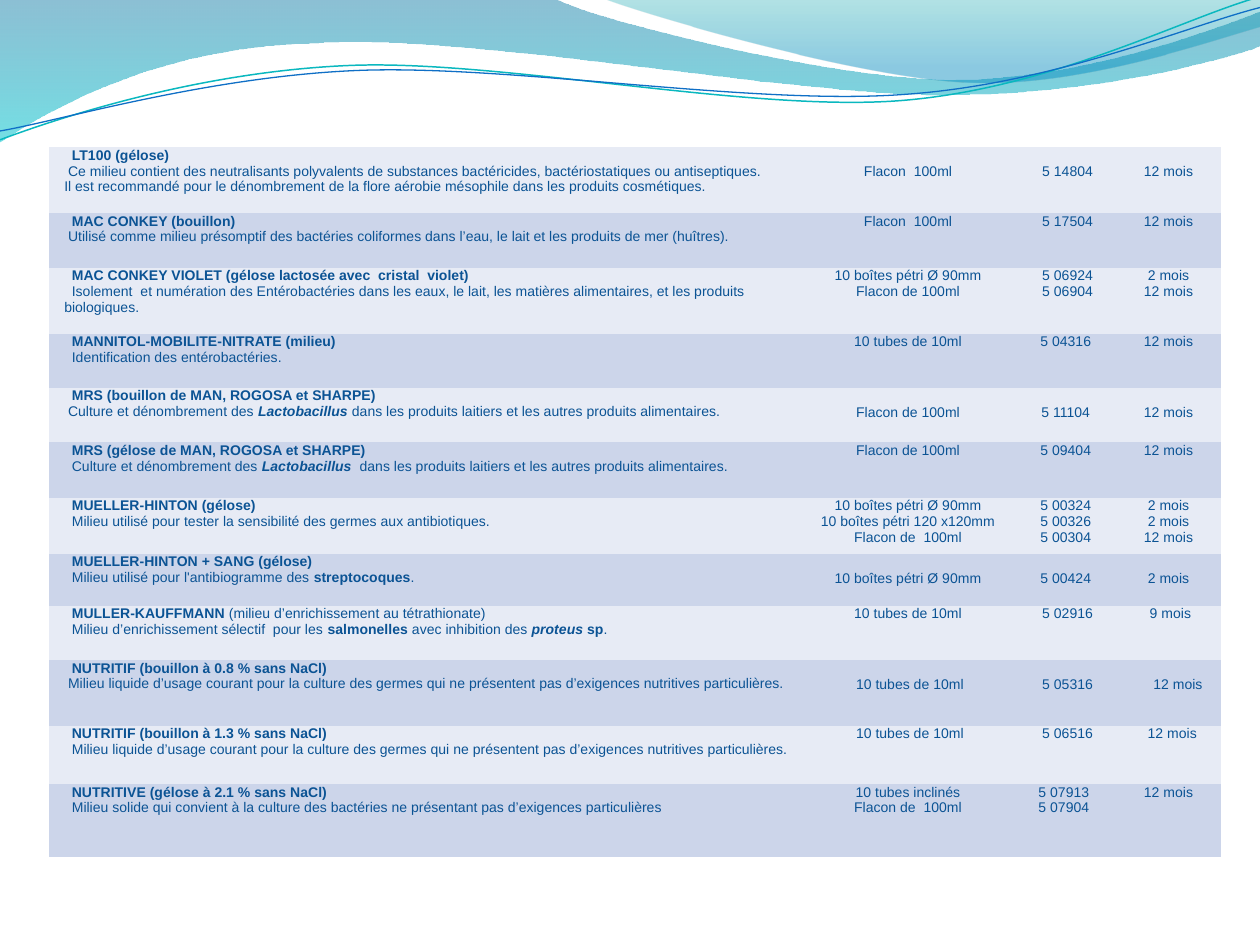
import math
from dataclasses import dataclass

import pptx
import pptx.dml.color
import pptx.enum.text
import pptx.oxml
import pptx.oxml.ns
import pptx.util

Inches, Pt = pptx.util.Inches, pptx.util.Pt
RGB = pptx.dml.color.RGBColor
qn = pptx.oxml.ns.qn

INK = RGB(0x0B, 0x53, 0x94)
BANDS = RGB(0xE7, 0xEB, 0xF5), RGB(0xCC, 0xD5, 0xEA)
SEA, AQUA = RGB(0x00, 0x74, 0xA1), RGB(0x00, 0xC6, 0xCF)
TEAL, SKY = RGB(0x00, 0xA1, 0xA9), RGB(0x00, 0x8B, 0xBF)
CYAN, BLUE = RGB(0x0A, 0xB8, 0xBF), RGB(0x0F, 0x6F, 0xC6)

NO_GRID = "{2D5ABB26-0587-4C30-8999-92F81FD0307C}"
WIDE, HIGH = 9.3, 5.63  # table size
WIDTHS = 5.99, 1.64, 0.83, 0.83
STEP = 0.03  # one step of indent
LINE = 0.13  # height of one text line


@dataclass
class Stop:
    color: RGB
    alpha: int
    place: float


@dataclass
class Wave:
    """Outline: one point makes a straight leg, three make a Bezier curve."""
    start: tuple
    legs: list
    stops: tuple = ()
    line: RGB = None
    width: float = 0
    mid: tuple = (0, 0)
    turn: float = 0  # degrees about mid


@dataclass
class Medium:
    """Name and notes use *bold* and *_bold italic* marks."""
    height: float
    name: str
    notes: list
    packs: list
    codes: list
    lives: list
    dent: int = 2
    shifts: tuple = (0, 2, 0)
    drop: bool = False  # details start on the second line


WAVES = [
    Wave((0, 0), [
        [(4.4, -0.01)],
        [(4.76, 0.17), (6.64, 0.63), (7.58, 0.63)],
        [(8.53, 0.63), (9.58, 0.26), (10, 0.09)],
        [(10.01, 0.36)],
        [(9.83, 0.44), (8.7, 0.76), (7.46, 0.75)],
        [(6.22, 0.75), (3.82, 0.28), (2.57, 0.34)],
        [(1.29, 0.36), (0.46, 0.83), (-0.01, 1.13)],
    ], stops=(Stop(SEA, 45, 0), Stop(AQUA, 55, 1))),
    Wave((4.79, -0.01), [
        [(5.09, 0.11), (6.82, 0.62), (7.69, 0.65)],
        [(8.56, 0.69), (9.61, 0.32), (10, 0.21)],
        [(10, 0)],
    ], stops=(Stop(TEAL, 30, 0), Stop(SKY, 45, 0.8))),
    Wave((0, 1.11), [
        [(0.48, 0.93), (1.58, 0.57), (2.77, 0.52)],
        [(3.95, 0.47), (5.93, 0.89), (7.13, 0.8)],
        [(8.33, 0.71), (9.38, 0.15), (9.98, -0.02)],
    ], line=CYAN, width=0.85, mid=(4.99, 0.57), turn=-2.7),
    Wave((0, 1.04), [
        [(0.47, 0.96), (1.64, 0.61), (2.83, 0.56)],
        [(4.03, 0.51), (5.97, 0.84), (7.17, 0.75)],
        [(8.36, 0.67), (9.41, 0.21), (10, 0.06)],
    ], line=BLUE, width=0.75, mid=(5, 0.59), turn=-2.7),
]

MEDIA = [
    Medium(0.52, "*LT100 (gélose)*",
           ["Ce milieu contient des neutralisants polyvalents de substances bactéricides, bactériostatiques ou antiseptiques.",
            "Il est recommandé pour le dénombrement de la flore aérobie mésophile dans les produits cosmétiques."],
           ["Flacon  100ml"], ["5 14804"], ["12 mois"], dent=1, drop=True),
    Medium(0.43, "*MAC CONKEY (bouillon)*",
           ["Utilisé comme milieu présomptif des bactéries coliformes dans l’eau, le lait et les produits de mer (huîtres)."],
           ["Flacon  100ml"], ["5 17504"], ["12 mois"], dent=1),
    Medium(0.52, "*MAC CONKEY VIOLET (gélose lactosée avec  cristal  violet)*",
           ["Isolement  et numération des Entérobactéries dans les eaux, le lait, les matières alimentaires, et les produits biologiques."],
           ["10 boîtes pétri Ø 90mm", "Flacon de 100ml"], ["5 06924", "5 06904"],
           ["2 mois", "12 mois"]),
    Medium(0.43, "*MANNITOL-MOBILITE-NITRATE (milieu)*",
           ["Identification des entérobactéries."],
           ["10 tubes de 10ml"], ["5 04316"], ["12 mois"], shifts=(0, 1, 0)),
    Medium(0.43, "*MRS (bouillon de MAN, ROGOSA et SHARPE)*",
           ["Culture et dénombrement des *_Lactobacillus *dans les produits laitiers et les autres produits alimentaires."],
           ["Flacon de 100ml"], ["5 11104"], ["12 mois"], dent=1, shifts=(0, 1, 0), drop=True),
    Medium(0.44, "*MRS (gélose de MAN, ROGOSA et SHARPE)*",
           ["Culture et dénombrement des *_Lactobacillus  *dans les produits laitiers et les autres produits alimentaires."],
           ["Flacon de 100ml"], ["5 09404"], ["12 mois"], shifts=(0, 1, 0)),
    Medium(0.44, "*MUELLER-HINTON (gélose)*",
           ["Milieu utilisé pour tester la sensibilité des germes aux antibiotiques."],
           ["10 boîtes pétri Ø 90mm", "10 boîtes pétri 120 x120mm", "Flacon de  100ml"],
           ["5 00324", "5 00326", "5 00304"], ["2 mois", "2 mois", "12 mois"], shifts=(0, 1, 0)),
    Medium(0.41, "*MUELLER-HINTON + SANG (gélose)*",
           ["Milieu utilisé pour l'antibiogramme des* streptocoques*."],
           ["10 boîtes pétri Ø 90mm"], ["5 00424"], ["2 mois"], shifts=(0, 1, 0), drop=True),
    Medium(0.43, "*MULLER-KAUFFMANN *(milieu d’enrichissement au tétrathionate)",
           ["Milieu d’enrichissement sélectif  pour les *salmonelles* avec inhibition des *_proteus **sp*."],
           ["10 tubes de 10ml"], ["5 02916"], ["9 mois"], shifts=(0, 2, 1)),
    Medium(0.52, "*NUTRITIF (bouillon à 0.8 % sans NaCl)*",
           ["Milieu liquide d’usage courant pour la culture des germes qui ne présentent pas d’exigences nutritives particulières."],
           ["10 tubes de 10ml"], ["5 05316"], ["12 mois"], dent=1, shifts=(1, 2, 5), drop=True),
    Medium(0.46, "*NUTRITIF (bouillon à 1.3 % sans NaCl)*",
           ["Milieu liquide d’usage courant pour la culture des germes qui ne présentent pas d’exigences nutritives particulières."],
           ["10 tubes de 10ml"], ["5 06516"], ["12 mois"], shifts=(1, 2, 2)),
    Medium(0.57, "*NUTRITIVE (gélose à 2.1 % sans NaCl)*",
           ["Milieu solide qui convient à la culture des bactéries ne présentant pas d’exigences particulières"],
           ["10 tubes inclinés", "Flacon de  100ml"], ["5 07913", "5 07904"], ["12 mois"],
           shifts=(0, 0, 0)),
]


def level(wave: Wave, dot: tuple) -> tuple:
    """Place of a point, in EMU, before the wave is turned."""
    arc = math.radians(-wave.turn)
    x, y = dot[0] - wave.mid[0], dot[1] - wave.mid[1]
    return (Inches(wave.mid[0] + x * math.cos(arc) - y * math.sin(arc)),
            Inches(wave.mid[1] + x * math.sin(arc) + y * math.cos(arc)))


def draw_wave(slide, wave: Wave) -> None:
    legs = [[level(wave, dot) for dot in leg] for leg in wave.legs]
    pen = slide.shapes.build_freeform(*level(wave, wave.start))
    pen.add_line_segments([leg[-1] for leg in legs], close=bool(wave.stops))
    shape = pen.convert_to_shape()
    # Bend the legs that have control points
    for leg, node in zip(legs, list(shape._element.iter(qn("a:lnTo")))):
        if len(leg) == 3:
            node.tag = qn("a:cubicBezTo")
            for k, (x, y) in enumerate(leg[:2]):
                dot = node.makeelement(qn("a:pt"), {
                    "x": str(x - pen.shape_offset_x), "y": str(y - pen.shape_offset_y)})
                node.insert(k, dot)
    shape.rotation = wave.turn
    shape.shadow.inherit = False
    if wave.stops:
        shade(shape, wave.stops)
    else:
        shape.fill.background()
        shape.line.color.rgb = wave.line
        shape.line.width = Pt(wave.width)


def shade(shape, stops: tuple) -> None:
    shape.line.fill.background()
    shape.fill.gradient()
    shape.fill.gradient_angle = 270
    marks = list(shape._element.iter(qn("a:gs")))
    for stop, grad, mark in zip(stops, shape.fill.gradient_stops, marks):
        grad.color.rgb = stop.color
        grad.position = stop.place
        alpha = mark[0].makeelement(qn("a:alpha"), {"val": str(stop.alpha * 1000)})
        mark[0].append(alpha)


def write(para, text: str, left: float = 0, first: float = 0) -> None:
    para.font.name, para.font.size = "Arial", Pt(8)
    para.font.color.rgb = INK
    props = para._p.get_or_add_pPr()
    props.set("marL", str(Inches(left)))
    props.set("indent", str(Inches(first)))
    for n, part in enumerate(text.split("*")):
        if part:
            run = para.add_run()
            run.text = part.lstrip("_")
            run.font.bold = n % 2 == 1
            run.font.italic = part.startswith("_")


def add_paras(cell, count: int) -> list:
    frame = cell.text_frame
    return [frame.paragraphs[0]] + [frame.add_paragraph() for _ in range(count - 1)]


def fill_row(row, item: Medium, band: RGB) -> None:
    for cell in row.cells:
        cell.margin_left = cell.margin_right = cell.margin_top = cell.margin_bottom = 0
        cell.fill.solid()
        cell.fill.fore_color.rgb = band
    # Name and use of the medium
    lines = [item.name] + item.notes
    dents = [2, item.dent, 0]
    for para, line, dent in zip(add_paras(row.cells[0], len(lines)), lines, dents):
        write(para, line, 0.12, dent * STEP)
    # Packs, codes and shelf lives
    for k, lines in enumerate((item.packs, item.codes, item.lives)):
        cell = row.cells[k + 1]
        cell.margin_top = Inches(LINE if item.drop else 0)
        for para, line in zip(add_paras(cell, len(lines)), lines):
            para.alignment = pptx.enum.text.PP_ALIGN.CENTER
            write(para, line, item.shifts[k] * STEP)


def main() -> None:
    deck = pptx.Presentation()
    deck.slide_width, deck.slide_height = Inches(10), Inches(7.5)
    slide = deck.slides.add_slide(deck.slide_layouts[6])
    # Waves across the top
    for wave in WAVES:
        draw_wave(slide, wave)
    # Table of culture media
    table = slide.shapes.add_table(len(MEDIA), len(WIDTHS), Inches(0.39), Inches(1.17),
                                   Inches(WIDE), Inches(HIGH)).table
    table.first_row = table.horz_banding = False
    table._tbl.tblPr.find(qn("a:tableStyleId")).text = NO_GRID
    for col, width in zip(table.columns, WIDTHS):
        col.width = Inches(WIDE * width / sum(WIDTHS))
    total = sum(item.height for item in MEDIA)
    for n, (row, item) in enumerate(zip(table.rows, MEDIA)):
        row.height = Inches(HIGH * item.height / total)
        fill_row(row, item, BANDS[n % 2])
    deck.save("out.pptx")


if __name__ == "__main__":
    main()
